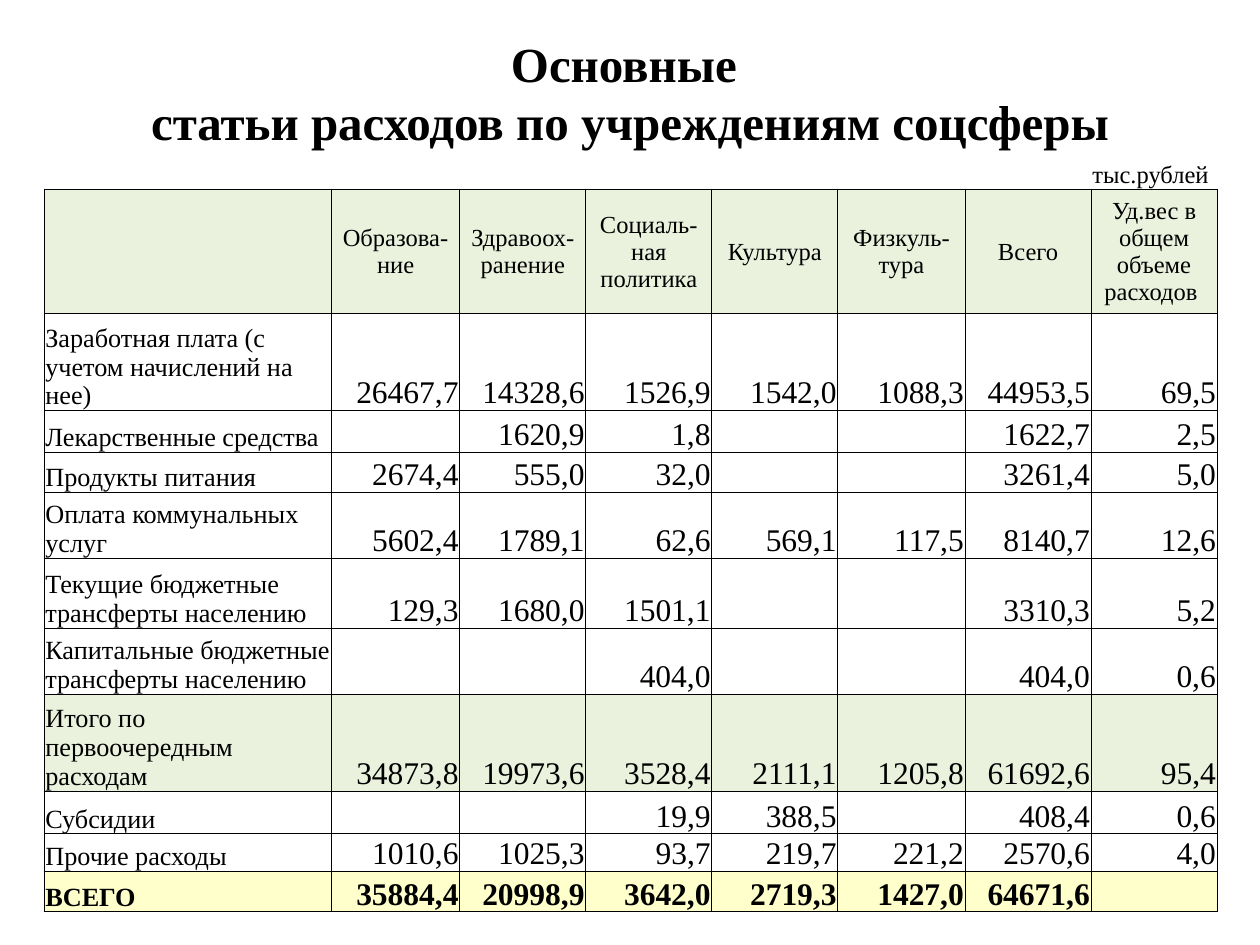
"""Builds the slide with the main expenditure items of social institutions."""
from lxml.etree import SubElement
from pptx import Presentation
from pptx.dml.color import RGBColor
from pptx.enum.text import MSO_ANCHOR, MSO_AUTO_SIZE, PP_ALIGN
from pptx.oxml.ns import qn
from pptx.util import Inches, Pt

FONT = "Times New Roman"
BLACK = RGBColor(0x00, 0x00, 0x00)
WHITE = RGBColor(0xFF, 0xFF, 0xFF)
GREEN = RGBColor(0xEA, 0xF1, 0xDD)
YELLOW = RGBColor(0xFF, 0xFF, 0xCC)

TITLE = "Основные \nстатьи расходов по учреждениям соцсферы"
UNITS = ["", "", "", "", "", "", "", "тыс.рублей"]
HEADINGS = ["", "Образова-\nние", "Здравоох-\nранение", "Социаль-\nная политика",
            "Культура", "Физкуль-\nтура", "Всего", "Уд.вес в общем объеме расходов "]
EXPENSES = [
    ["Заработная плата (с учетом начислений на нее)",
     "26467,7", "14328,6", "1526,9", "1542,0", "1088,3", "44953,5", "69,5"],
    ["Лекарственные средства", "", "1620,9", "1,8", "", "", "1622,7", "2,5"],
    ["Продукты питания", "2674,4", "555,0", "32,0", "", "", "3261,4", "5,0"],
    ["Оплата коммунальных услуг",
     "5602,4", "1789,1", "62,6", "569,1", "117,5", "8140,7", "12,6"],
    ["Текущие бюджетные трансферты населению",
     "129,3", "1680,0", "1501,1", "", "", "3310,3", "5,2"],
    ["Капитальные бюджетные трансферты населению",
     "", "", "404,0", "", "", "404,0", "0,6"],
    ["Итого по первоочередным расходам",
     "34873,8", "19973,6", "3528,4", "2111,1", "1205,8", "61692,6", "95,4"],
    ["Субсидии", "", "", "19,9", "388,5", "", "408,4", "0,6"],
    ["Прочие расходы", "1010,6", "1025,3", "93,7", "219,7", "221,2", "2570,6", "4,0"],
    ["ВСЕГО", "35884,4", "20998,9", "3642,0", "2719,3", "1427,0", "64671,6", ""],
]
ROWS = [UNITS, HEADINGS, *EXPENSES]
UNITS_ROW, HEADING_ROW, SUBTOTAL_ROW, TOTAL_ROW = 0, 1, 8, len(ROWS) - 1
ROW_FILLS = {HEADING_ROW: GREEN, SUBTOTAL_ROW: GREEN, TOTAL_ROW: YELLOW}
COLUMN_WIDTHS = [2.28, 1.02, 1, 1, 1, 1.01, 1, 1]
ROW_HEIGHTS = [0.24, 0.99, 0.77, 0.33, 0.32, 0.52, 0.56, 0.52, 0.77, 0.34, 0.3, 0.32]


def format_text(frame, size, align, bold):
    for paragraph in frame.paragraphs:
        paragraph.alignment = align
        for run in paragraph.runs:
            run.font.name = FONT
            run.font.size = Pt(size)
            run.font.bold = bold
            run.font.color.rgb = BLACK
        if not paragraph.runs:
            SubElement(paragraph._p, qn("a:endParaRPr"), sz="1000")


def draw_borders(cell, sides):
    properties = cell._tc.get_or_add_tcPr()
    for side in ("L", "R", "T", "B"):
        line = SubElement(properties, qn(f"a:ln{side}"), w=str(Pt(0.5)))
        if side in sides:
            fill = SubElement(line, qn("a:solidFill"))
            SubElement(fill, qn("a:srgbClr"), val=str(BLACK))
        else:
            SubElement(line, qn("a:noFill"))


def cell_style(row, column):
    if row == UNITS_ROW:
        return 14, PP_ALIGN.LEFT
    if row == HEADING_ROW:
        return 14, PP_ALIGN.CENTER
    return (15, PP_ALIGN.LEFT) if column == 0 else (18, PP_ALIGN.RIGHT)


def fill_cell(cell, text, row, column):
    cell.margin_left = cell.margin_right = cell.margin_top = Inches(0.01)
    cell.margin_bottom = 0
    cell.vertical_anchor = MSO_ANCHOR.MIDDLE if row == HEADING_ROW else MSO_ANCHOR.BOTTOM
    draw_borders(cell, "B" if row == UNITS_ROW else "LRTB")
    cell.fill.solid()
    cell.fill.fore_color.rgb = ROW_FILLS.get(row, WHITE)
    cell.text_frame.text = text
    size, align = cell_style(row, column)
    format_text(cell.text_frame, size, align, row == TOTAL_ROW)


def add_title(slide):
    title = slide.shapes.title
    title.left, title.top = Inches(0.35), Inches(0.21)
    title.width, title.height = Inches(9.3), Inches(1.04)
    title.text_frame.text = TITLE
    title.text_frame.auto_size = MSO_AUTO_SIZE.NONE
    title.text_frame.vertical_anchor = MSO_ANCHOR.MIDDLE
    format_text(title.text_frame, 28, PP_ALIGN.CENTER, True)


def add_expense_table(slide):
    table = slide.shapes.add_table(
        len(ROWS), len(COLUMN_WIDTHS), Inches(0.35), Inches(1.26),
        Inches(sum(COLUMN_WIDTHS)), Inches(sum(ROW_HEIGHTS))).table
    table.first_row = table.horz_banding = False
    for column, width in zip(table.columns, COLUMN_WIDTHS):
        column.width = Inches(width)
    for row, height in zip(table.rows, ROW_HEIGHTS):
        row.height = Inches(height)
    for r, texts in enumerate(ROWS):
        for c, text in enumerate(texts):
            fill_cell(table.cell(r, c), text, r, c)


def main():
    presentation = Presentation()
    presentation.slide_width, presentation.slide_height = Inches(10), Inches(7.5)
    slide = presentation.slides.add_slide(presentation.slide_layouts[5])
    add_title(slide)
    add_expense_table(slide)
    presentation.save("out.pptx")


if __name__ == "__main__":
    main()
